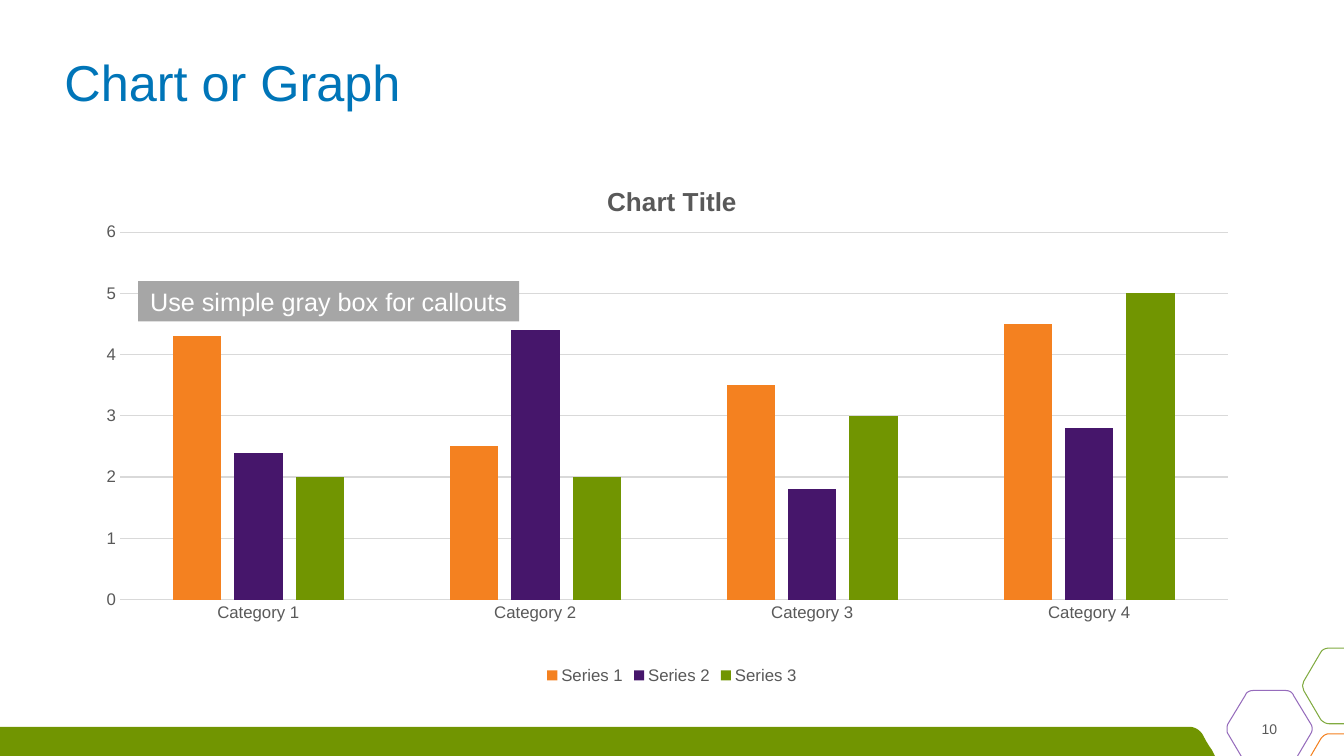
from lxml import etree
from pptx import Presentation
from pptx.chart.data import CategoryChartData
from pptx.dml.color import RGBColor
from pptx.enum.chart import XL_CHART_TYPE, XL_LEGEND_POSITION, XL_TICK_MARK
from pptx.enum.shapes import MSO_SHAPE
from pptx.enum.text import MSO_ANCHOR, PP_ALIGN
from pptx.oxml.ns import qn
from pptx.util import Inches, Pt

COLUMNS = XL_CHART_TYPE.COLUMN_CLUSTERED
BOTTOM = XL_LEGEND_POSITION.BOTTOM
NO_TICK = XL_TICK_MARK.NONE
RECT = MSO_SHAPE.RECTANGLE
MIDDLE = MSO_ANCHOR.MIDDLE
LEFT, CENTER = PP_ALIGN.LEFT, PP_ALIGN.CENTER

BLUE = RGBColor(0x00, 0x75, 0xB8)
ORANGE = RGBColor(0xF4, 0x81, 0x20)
PURPLE = RGBColor(0x46, 0x16, 0x6B)
GREEN = RGBColor(0x71, 0x95, 0x01)
LILAC = RGBColor(0x96, 0x6C, 0xBC)
LIGHT_GREEN = RGBColor(0x81, 0xAB, 0x41)
TEXT_GRAY = RGBColor(0x59, 0x59, 0x59)
GRID_GRAY = RGBColor(0xD9, 0xD9, 0xD9)
BOX_GRAY = RGBColor(0xA6, 0xA6, 0xA6)
WHITE = RGBColor(0xFF, 0xFF, 0xFF)
FONT = "Arial"
CURVE_STEPS = 8

prs = Presentation()
prs.slide_width, prs.slide_height = Inches(13.33), Inches(7.5)
s = prs.slides.add_slide(prs.slide_layouts[6])


def add_outline(segments, closed=False):
    points = []
    for seg in segments:
        if len(seg) == 2:
            points.append(seg)
            continue
        x0, y0 = points[-1]
        x1, y1, x2, y2, x3, y3 = seg
        for i in range(1, CURVE_STEPS + 1):
            t = i / CURVE_STEPS
            a, b, c, d = (1 - t) ** 3, 3 * t * (1 - t) ** 2, 3 * t * t * (1 - t), t ** 3
            points.append((a * x0 + b * x1 + c * x2 + d * x3,
                           a * y0 + b * y1 + c * y2 + d * y3))
    points = [(Inches(x), Inches(y)) for x, y in points]
    fb = s.shapes.build_freeform(*points[0])
    fb.add_line_segments(points[1:], close=closed)
    sp = fb.convert_to_shape()
    sp.shadow.inherit = False
    return sp


def write_text(sp, text, size, color, align):
    tf = sp.text_frame
    tf.vertical_anchor = MIDDLE
    p = tf.paragraphs[0]
    p.alignment = align
    r = p.add_run()
    r.text = text
    r.font.name, r.font.size = FONT, Pt(size)
    r.font.color.rgb = color


footer = add_outline([
    (0, 7.21), (11.79, 7.21), (11.85, 7.21, 11.9, 7.24, 11.93, 7.29),
    (11.96, 7.35, 11.99, 7.4, 12.02, 7.44), (12.05, 7.5), (0, 7.5)], closed=True)
footer.fill.solid()
footer.fill.fore_color.rgb = GREEN
footer.line.fill.background()

hexagons = [
    (LILAC, [(12.31, 7.5), (12.18, 7.28), (12.17, 7.27, 12.17, 7.25, 12.17, 7.23),
             (12.17, 7.22, 12.17, 7.2, 12.18, 7.18), (12.35, 6.9),
             (12.36, 6.87, 12.39, 6.85, 12.43, 6.85), (12.75, 6.85),
             (12.79, 6.85, 12.82, 6.87, 12.83, 6.9), (13, 7.18),
             (13.02, 7.21, 13.02, 7.25, 13, 7.28), (12.87, 7.5)]),
    (LIGHT_GREEN, [(13.33, 7.18), (13.18, 7.18), (13.15, 7.18, 13.12, 7.16, 13.1, 7.14),
                   (12.93, 6.85), (12.93, 6.84, 12.92, 6.82, 12.92, 6.8),
                   (12.92, 6.79, 12.93, 6.77, 12.93, 6.76), (13.1, 6.47),
                   (13.12, 6.44, 13.15, 6.43, 13.18, 6.43), (13.33, 6.43)]),
    (ORANGE, [(13, 7.5), (13.1, 7.33), (13.12, 7.3, 13.15, 7.28, 13.18, 7.28),
              (13.33, 7.28)]),
]
for color, segments in hexagons:
    sp = add_outline(segments)
    sp.fill.background()
    sp.line.color.rgb = color
    sp.line.width = Pt(0.75)

title = s.shapes.add_textbox(Inches(0.54), Inches(0.5), Inches(12.25), Inches(0.7))
title.text_frame.word_wrap = True
write_text(title, "Chart or Graph", 36, BLUE, LEFT)
title.text_frame.paragraphs[0].line_spacing = 0.9

data = CategoryChartData()
data.categories = [f"Category {i}" for i in range(1, 5)]
series = [((4.3, 2.5, 3.5, 4.5), ORANGE),
          ((2.4, 4.4, 1.8, 2.8), PURPLE),
          ((2, 2, 3, 5), GREEN)]
for i, (values, color) in enumerate(series, 1):
    data.add_series(f"Series {i}", values)
chart = s.shapes.add_chart(COLUMNS, Inches(0.54), Inches(1.62),
                           Inches(12.25), Inches(5.21), data).chart
chart.font.name, chart.font.size = FONT, Pt(12)
chart.font.color.rgb = TEXT_GRAY

chart.has_title = True
r = chart.chart_title.text_frame.paragraphs[0].add_run()
r.text = "Chart Title"
r.font.name, r.font.size, r.font.bold = FONT, Pt(18.6), True
r.font.color.rgb = TEXT_GRAY
chart.chart_title.include_in_layout = False

chart.has_legend = True
chart.legend.position = BOTTOM
chart.legend.include_in_layout = False

plot = chart.plots[0]
plot.gap_width, plot.overlap = 219, -27
plot.vary_by_categories = False
for ser, (values, color) in zip(plot.series, series):
    ser.format.fill.solid()
    ser.format.fill.fore_color.rgb = color
    ser.invert_if_negative = False

cat_axis, val_axis = chart.category_axis, chart.value_axis
for axis in (cat_axis, val_axis):
    axis.major_tick_mark = axis.minor_tick_mark = NO_TICK
val_axis.minimum_scale, val_axis.maximum_scale, val_axis.major_unit = 0, 6, 1
val_axis.format.line.fill.background()
val_axis.has_major_gridlines = True
for line in (cat_axis.format.line, val_axis.major_gridlines.format.line):
    line.color.rgb = GRID_GRAY
    line.width = Pt(0.75)

plot_area = chart.element.find(".//" + qn("c:plotArea"))
layout = plot_area.find(qn("c:layout"))
if layout is None:
    layout = etree.Element(qn("c:layout"))
    plot_area.insert(0, layout)
manual = etree.SubElement(layout, qn("c:manualLayout"))
for tag, val in (("layoutTarget", "inner"), ("xMode", "edge"), ("yMode", "edge"),
                 ("x", "0.053"), ("y", "0.131"), ("w", "0.897"), ("h", "0.7")):
    etree.SubElement(manual, qn("c:" + tag)).set("val", val)

number = s.shapes.add_textbox(Inches(12.18), Inches(7.11), Inches(0.82), Inches(0.24))
number.text_frame.word_wrap = True
write_text(number, "10", 10, TEXT_GRAY, CENTER)

callout = s.shapes.add_shape(RECT, Inches(1.37), Inches(2.79), Inches(3.78), Inches(0.4))
callout.shadow.inherit = False
callout.fill.solid()
callout.fill.fore_color.rgb = BOX_GRAY
callout.line.fill.background()
callout.text_frame.word_wrap = False
write_text(callout, "Use simple gray box for callouts", 18, WHITE, CENTER)

prs.save("out.pptx")
